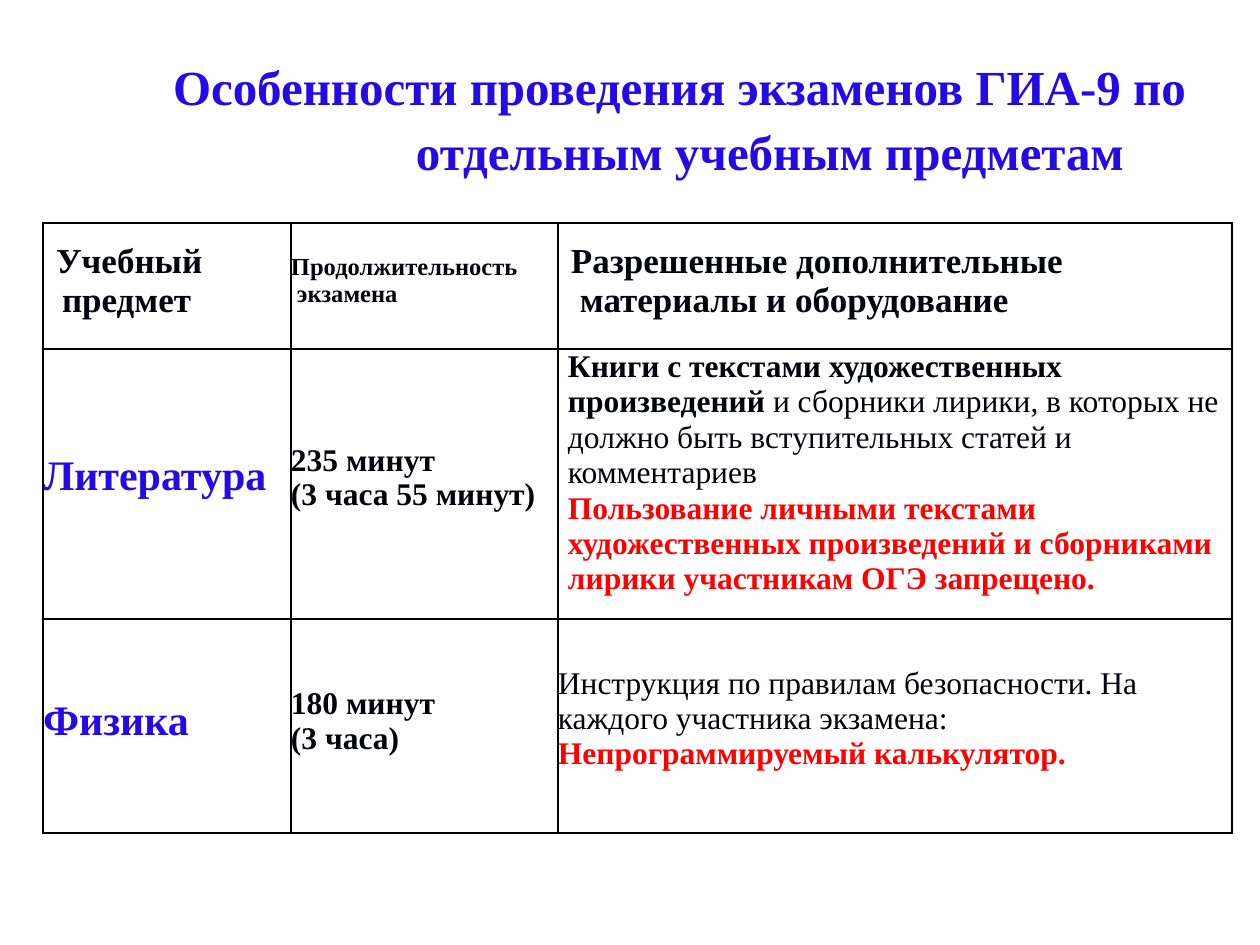
from pptx import Presentation
from pptx.dml.color import RGBColor
from pptx.enum.text import MSO_ANCHOR
from pptx.oxml.ns import qn
from pptx.util import Pt
from lxml import etree

PX = 914400 // 126
TOP = MSO_ANCHOR.TOP
THEME = {
    "font": "Times New Roman",
    "ink": "00000A", "blue": "240AE4", "red": "FF0000", "border": "000000",
    "title": 28, "subject": 24, "header": 20, "body": 18, "small": 14,
}


def write(frame, paragraphs, size="body", color="ink", bold=True,
          left=0, indent=0, spacing=None):
    """Each paragraph is a list of (text, format overrides) spans."""
    frame.word_wrap = True
    for index, spans in enumerate(paragraphs):
        para = frame.paragraphs[0] if index == 0 else frame.add_paragraph()
        properties = para._p.get_or_add_pPr()
        properties.set("marL", str(left * PX))
        properties.set("indent", str(indent * PX))
        if spacing:
            para.line_spacing = spacing
        for text, override in spans:
            span = para.add_run()
            span.text = text
            span.font.name = THEME["font"]
            span.font.size = Pt(THEME[size])
            span.font.bold = override.get("bold", bold)
            span.font.color.rgb = RGBColor.from_string(THEME[override.get("color", color)])


def add_borders(cell, bottom_width):
    properties = cell._tc.get_or_add_tcPr()
    for side in "LRTB":
        width = bottom_width if side == "B" else 1
        line = etree.SubElement(properties, qn(f"a:ln{side}"), w=str(Pt(width)))
        fill = etree.SubElement(line, qn("a:solidFill"))
        etree.SubElement(fill, qn("a:srgbClr"), val=THEME["border"])


deck = Presentation()
deck.slide_width, deck.slide_height = 1260 * PX, 945 * PX
page = deck.slides.add_slide(deck.slide_layouts[6])

# Title
box = page.shapes.add_textbox(65 * PX, 49 * PX, 1128 * PX, 121 * PX)
frame = box.text_frame
frame.margin_left = frame.margin_right = frame.margin_bottom = 0
frame.margin_top = 2 * PX
write(frame, [[("Особенности проведения экзаменов ГИА-9 по отдельным учебным предметам", {})]],
      size="title", color="blue", left=351, indent=-243, spacing=1.1)

# Table content: top margin in px, paragraphs, format
plain = {"bold": False}
red = {"color": "red"}
rows = [
    [
        (19, [[("Учебный предмет", {})]], {"size": "header", "left": 19, "indent": -6}),
        (31, [[("Продолжительность экзамена", {})]], {"size": "small", "left": 6, "indent": -6}),
        (19, [[("Разрешенные дополнительные материалы и оборудование", {})]],
         {"size": "header", "left": 22, "indent": -9}),
    ],
    [
        (104, [[("Литература", {})]], {"size": "subject", "color": "blue"}),
        (94, [[("235 минут", {})], [("(3 часа 55 минут)", {})]], {}),
        (0, [
            [("Книги с текстами художественных", {})],
            [("произведений ", {}),
             ("и сборники лирики, в которых не должно быть вступительных статей и", plain)],
            [("комментариев", plain)],
            [("Пользование личными текстами художественных произведений и сборниками", red)],
            [("лирики участникам ОГЭ запрещено.", red)],
        ], {"left": 10, "spacing": Pt(20.2)}),
    ],
    [
        (79, [[("Физика", {})]], {"size": "subject", "color": "blue"}),
        (68, [[("180 минут", {})], [("(3 часа)", {})]], {}),
        (48, [[("Инструкция по правилам безопасности. На каждого участника экзамена: ", plain),
               ("Непрограммируемый калькулятор.", red)]], {}),
    ],
]

# Table grid
column_widths = [248, 267, 674]
row_heights = [126, 270, 214]
table = page.shapes.add_table(len(rows), len(column_widths), 43 * PX, 223 * PX,
                              sum(column_widths) * PX, sum(row_heights) * PX).table
table.first_row = table.horz_banding = False
for column, width in zip(table.columns, column_widths):
    column.width = width * PX
for row, height in zip(table.rows, row_heights):
    row.height = height * PX

# Table cells
for row_index, row in enumerate(rows):
    for column_index, (top, paragraphs, style) in enumerate(row):
        cell = table.cell(row_index, column_index)
        cell.margin_left = cell.margin_right = cell.margin_bottom = 0
        cell.margin_top = top * PX
        cell.vertical_anchor = TOP
        add_borders(cell, 1.5 if row_index == len(rows) - 1 else 1)
        cell.fill.background()
        write(cell.text_frame, paragraphs, **style)

deck.save("out.pptx")
